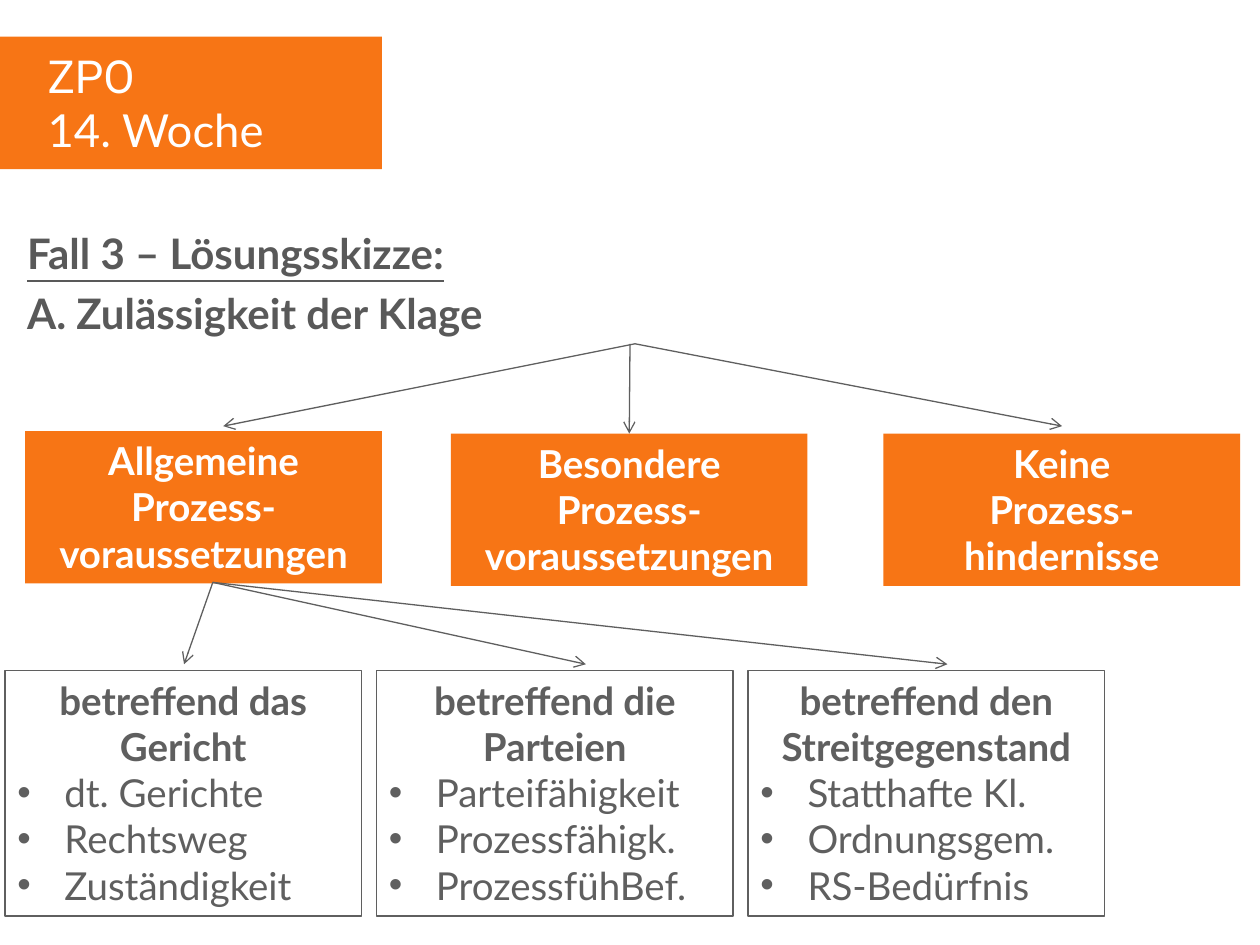
from dataclasses import dataclass

from lxml.etree import SubElement
from pptx import Presentation
from pptx.dml.color import RGBColor
from pptx.enum.shapes import MSO_CONNECTOR, MSO_SHAPE
from pptx.enum.text import MSO_ANCHOR, MSO_AUTO_SIZE, PP_ALIGN
from pptx.oxml.ns import qn
from pptx.util import Cm, Pt


@dataclass(frozen=True)
class Theme:
    accent: RGBColor = RGBColor(0xF7, 0x75, 0x15)
    white: RGBColor = RGBColor(0xFF, 0xFF, 0xFF)
    heading: RGBColor = RGBColor(0x59, 0x59, 0x59)
    grey: RGBColor = RGBColor(0x5F, 0x5F, 0x5F)
    font: str = "Lato"
    title_font: str = "Roboto"
    title_size: Pt = Pt(26)
    heading_size: Pt = Pt(24)
    box_size: Pt = Pt(22)
    line_width: Pt = Pt(0.75)


THEME = Theme()
BOX_W = 7.19
HEADING_TABS = (0.99, 2, 3, 4.01, 5.46, 6.73, 8.23, 9.96)


def style(p, size, color, bold=False, font=THEME.font):
    for r in p.runs:
        r.font.name, r.font.size, r.font.bold = font, size, bold
        r.font.color.rgb = color


def set_text(s, lines):
    tf = s.text_frame
    tf.word_wrap = True
    tf.auto_size = MSO_AUTO_SIZE.SHAPE_TO_FIT_TEXT
    tf.vertical_anchor = MSO_ANCHOR.TOP
    tf.text = "\n".join(lines)
    return tf.paragraphs


def add_text(slide, x, y, w, h, lines):
    return set_text(slide.shapes.add_textbox(Cm(x), Cm(y), Cm(w), Cm(h)), lines)


def add_rect(slide, x, y, w, h, filled=True):
    s = slide.shapes.add_shape(MSO_SHAPE.RECTANGLE, Cm(x), Cm(y), Cm(w), Cm(h))
    s.shadow.inherit = False
    if filled:
        s.fill.solid()
        s.fill.fore_color.rgb = THEME.accent
        s.line.fill.background()
    else:
        s.fill.background()
        s.line.color.rgb = THEME.grey
        s.line.width = THEME.line_width
    return s


def add_category(slide, x, y, lines):
    s = add_rect(slide, x, y, BOX_W, 3.07)
    for p in set_text(s, lines):
        p.alignment = PP_ALIGN.CENTER
        style(p, THEME.box_size, THEME.white, bold=True)
    return s


def add_bullet(p):
    pPr = p._p.get_or_add_pPr()
    pPr.set("marL", str(Cm(0.95)))
    pPr.set("indent", str(-Cm(0.95)))
    SubElement(pPr, qn("a:buFont")).set("typeface", "Arial")
    SubElement(pPr, qn("a:buChar")).set("char", "•")


def add_details(slide, x, y, heading, items):
    s = add_rect(slide, x, y, BOX_W, 4.95, filled=False)
    head, *bullets = set_text(s, [heading, *items])
    head.alignment = PP_ALIGN.CENTER
    style(head, THEME.box_size, THEME.grey, bold=True)
    for p in bullets:
        p.alignment = PP_ALIGN.LEFT
        add_bullet(p)
        style(p, THEME.box_size, THEME.grey)


def add_tabs(p, stops):
    tabs = SubElement(p._p.get_or_add_pPr(), qn("a:tabLst"))
    for stop in stops:
        tab = SubElement(tabs, qn("a:tab"))
        tab.set("pos", str(Cm(stop)))
        tab.set("algn", "l")


def add_arrow(slide, start, end):
    s = slide.shapes.add_connector(
        MSO_CONNECTOR.STRAIGHT, *(Cm(v) for v in (*start, *end)))
    s.line.color.rgb = THEME.grey
    s.line.width = THEME.line_width
    SubElement(s.line._get_or_add_ln(), qn("a:tailEnd")).set("type", "arrow")
    SubElement(s._element.spPr, qn("a:effectLst"))
    return s


def main():
    prs = Presentation()
    prs.slide_width, prs.slide_height = Cm(25.4), Cm(19.05)
    slide = prs.slides.add_slide(prs.slide_layouts[6])

    # Title banner
    add_rect(slide, 0, 0.74, 7.7, 2.67)
    subject, week = add_text(slide, 0.71, 0.84, 6.6, 2.49, ["ZPO", "14. Woche"])
    style(subject, THEME.title_size, THEME.white, font=THEME.title_font)
    style(week, THEME.title_size, THEME.white)

    # Case heading
    headings = add_text(slide, 0.3, 4.47, 24.79, 14.33,
                        ["Fall 3 – Lösungsskizze:", "A.\tZulässigkeit der Klage"])
    for p in headings:
        p.space_after = Pt(5)
        add_tabs(p, HEADING_TABS)
        style(p, THEME.heading_size, THEME.heading, bold=True)
    headings[0].runs[0].font.underline = True

    # Categories of admissibility
    add_category(slide, 0.51, 8.69, ["Allgemeine", "Prozess-voraussetzungen"])
    special = add_category(slide, 9.09, 8.74, ["Besondere Prozess-voraussetzungen"])
    add_category(slide, 17.81, 8.74, ["Keine", "Prozess-", "hindernisse"])

    # Arrows to the categories
    for x in (4.5, 21.41):
        add_arrow(slide, (12.8, 6.93), (x, 8.59))
    add_arrow(slide, (12.7, 6.93), (12.7, 8.74)).end_connect(special, 0)

    # Details of the general requirements
    details = [
        ("betreffend das Gericht",
         ["dt. Gerichte", "Rechtsweg", "Zuständigkeit"]),
        ("betreffend die Parteien",
         ["Parteifähigkeit", "Prozessfähigk.", "ProzessfühBef."]),
        ("betreffend den Streitgegenstand",
         ["Statthafte Kl.", "Ordnungsgem.", "RS-Bedürfnis"]),
    ]
    for i, (heading, items) in enumerate(details):
        add_details(slide, 0.1 + 7.49 * i, 13.52, heading, items)

    # Arrows to the details
    for x in (3.71, 11.81, 19.1):
        add_arrow(slide, (4.29, 11.74), (x, 13.39))

    prs.save("out.pptx")


if __name__ == "__main__":
    main()
